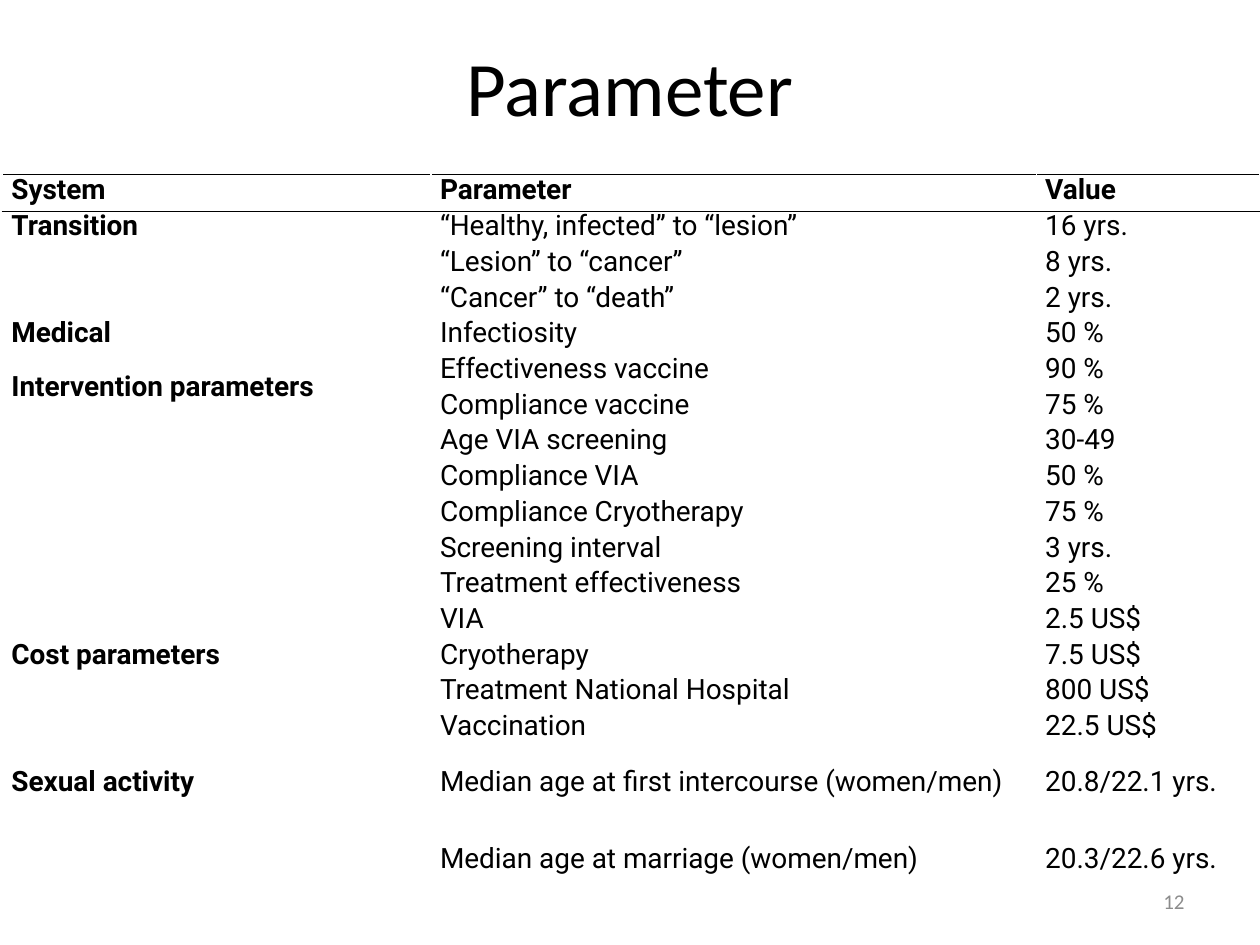
from lxml import etree
from pptx import Presentation, util as u
from pptx.dml.color import RGBColor
from pptx.enum import text
from pptx.oxml import ns

BLACK, WHITE, GREY = "000000", "FFFFFF", "8C8C8C"
ROWS = [
    ("System", "Parameter", "Value"),
    ("Transition", "“Healthy, infected” to “lesion”", "16 yrs."),
    ("", "“Lesion” to “cancer”", "8 yrs."),
    ("", "“Cancer” to “death”", "2 yrs."),
    ("Medical", "Infectiosity", "50 %"),
    ("Intervention parameters", "Effectiveness vaccine", "90 %"),
    ("", "Compliance vaccine", "75 %"),
    ("", "Age VIA screening", "30-49"),
    ("", "Compliance VIA", "50 %"),
    ("", "Compliance Cryotherapy", "75 %"),
    ("", "Screening interval", "3 yrs."),
    ("", "Treatment effectiveness", "25 %"),
    ("Cost parameters", "VIA", "2.5 US$"),
    ("", "Cryotherapy", "7.5 US$"),
    ("", "Treatment National Hospital", "800 US$"),
    ("", "Vaccination", "22.5 US$"),
    ("Sexual activity", "Median age at first intercourse (women/men)", "20.8/22.1 yrs."),
    ("", "Median age at marriage (women/men)", "20.3/22.6 yrs."),
]
WIDTHS = [8.64, 12.2, 4.5]
HEIGHTS = [0.74] + [0.72] * 15 + [1.54] * 2
MERGES = {5: 6, 12: 14}


def colour(value):
    return RGBColor.from_string(value)


def assign(target, values):
    for name, value in values.items():
        setattr(target, name, value)


class ParameterSlide:
    """Holds the text style and the current slide, and adds its elements."""

    cell_format = {
        "vertical_anchor": text.MSO_ANCHOR.MIDDLE,
        "margin_left": u.Cm(0.18),
        "margin_right": u.Cm(0.18),
        "margin_top": 0,
        "margin_bottom": 0,
    }
    para_format = {
        "alignment": text.PP_ALIGN.JUSTIFY,
        "line_spacing": u.Pt(15),
        "space_before": u.Pt(6),
    }

    def __init__(self, deck):
        self.page = deck.slides.add_slide(deck.slide_layouts[6])

    def add_words(self, para, words, size, font, tint=BLACK, bold=False):
        span = para.add_run()
        span.text = words
        assign(span.font, {"size": u.Pt(size), "name": font, "bold": bold})
        span.font.color.rgb = colour(tint)

    def label(self, place, words, size, align, tint=BLACK):
        box = self.page.shapes.add_textbox(*map(u.Cm, place))
        assign(box.text_frame, {"word_wrap": True, "vertical_anchor": text.MSO_ANCHOR.MIDDLE})
        para = box.text_frame.paragraphs[0]
        para.alignment = align
        self.add_words(para, words, size, "Calibri", tint)

    def border(self, cell, sides):
        properties = cell._tc.get_or_add_tcPr()
        for side, tint in sides.items():
            line = etree.SubElement(properties, ns.qn(f"a:ln{side}"), w=str(u.Pt(1)))
            fill = etree.SubElement(line, ns.qn("a:solidFill"))
            etree.SubElement(fill, ns.qn("a:srgbClr"), val=tint)

    def table(self, left, top, rows, widths, heights, merges):
        place = map(u.Cm, (left, top, sum(widths), sum(heights)))
        grid = self.page.shapes.add_table(len(rows), len(widths), *place).table
        assign(grid, {"first_row": False, "horz_banding": False})
        for column, width in zip(grid.columns, widths):
            column.width = u.Cm(width)
        for row, height in zip(grid.rows, heights):
            row.height = u.Cm(height)
        for first, last in merges.items():
            grid.cell(first, 0).merge(grid.cell(last, 0))
        for r, row in enumerate(rows):
            for c, words in enumerate(row):
                cell = grid.cell(r, c)
                assign(cell, self.cell_format)
                top_tint = BLACK if r < 2 else WHITE
                bottom_tint = BLACK if r == 0 else WHITE
                self.border(cell, {"L": WHITE, "R": WHITE, "T": top_tint, "B": bottom_tint})
                cell.fill.background()
                para = cell.text_frame.paragraphs[0]
                assign(para, self.para_format)
                if words:
                    self.add_words(para, words, 16, "Roboto", bold=r == 0 or c == 0)
                else:
                    para.font.size = u.Pt(16)


def main():
    deck = Presentation()
    assign(deck, {"slide_width": u.Cm(25.4), "slide_height": u.Cm(19.05)})
    slide = ParameterSlide(deck)
    slide.label((1.27, 0.13, 22.86, 3.18), "Parameter", 44, text.PP_ALIGN.CENTER)
    slide.table(0.05, 3.52, ROWS, WIDTHS, HEIGHTS, MERGES)
    slide.label((18.21, 17.65, 5.92, 1.02), "12", 12, text.PP_ALIGN.RIGHT, GREY)
    deck.save("out.pptx")


if __name__ == "__main__":
    main()
